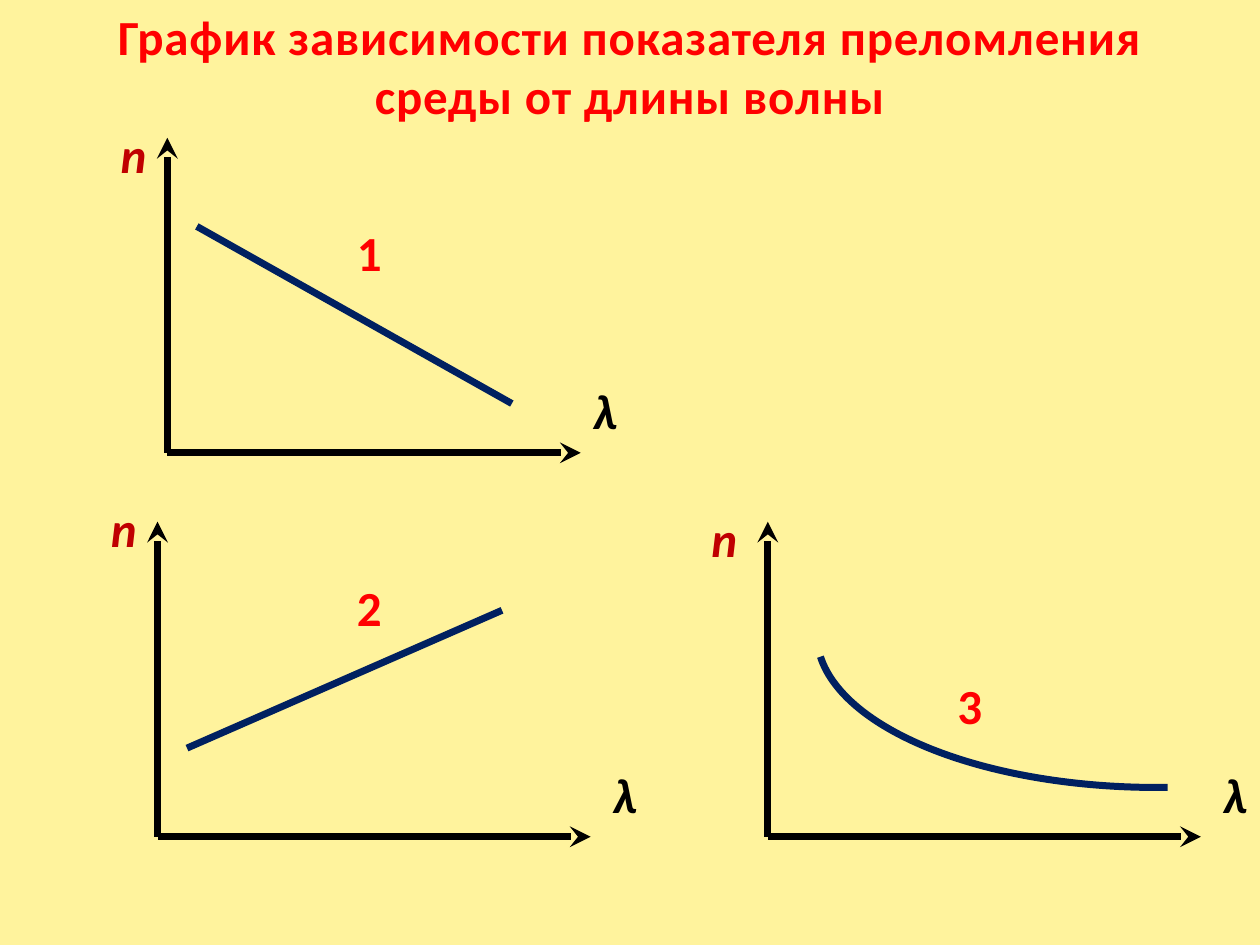
import pptx
import pptx.util
import pptx.dml.color
import pptx.enum.shapes
import pptx.enum.text
import pptx.oxml.ns
import lxml.etree

deck = pptx.Presentation()
deck.slide_width = pptx.util.Inches(10)
deck.slide_height = pptx.util.Inches(7.5)
page = deck.slides.add_slide(deck.slide_layouts[6])
column = deck.slide_width / 128
row = deck.slide_height / 96

BLACK, NAVY, RED, DARK_RED = "000000", "002060", "FF0000", "C00000"
LABEL_HEIGHT = 7.3


def color(value):
    return pptx.dml.color.RGBColor.from_string(value)


def write_text(text, *, left, top, width, height, fill, italic=False,
               wrap=False, align=pptx.enum.text.PP_ALIGN.LEFT, spacing=0):
    box = page.shapes.add_textbox(int(left * column), int(top * row),
                                  int(width * column), int(height * row))
    frame = box.text_frame
    frame.word_wrap = wrap
    frame.auto_size = pptx.enum.text.MSO_AUTO_SIZE.SHAPE_TO_FIT_TEXT
    for index, line in enumerate(text.split("\n")):
        para = frame.paragraphs[0] if index == 0 else frame.add_paragraph()
        para.alignment = align
        span = para.add_run()
        span.text = line
        span.font.name = "Calibri"
        span.font.size = pptx.util.Pt(28)
        span.font.bold = True
        span.font.italic = italic
        span.font.color.rgb = color(fill)
        if spacing:
            span._r.get_or_add_rPr().set("spc", str(int(spacing * 100)))


page.background.fill.solid()
page.background.fill.fore_color.rgb = color("FFF39D")

write_text("График зависимости показателя преломления\nсреды от длины волны",
           left=0, top=0, width=128, height=13.3, fill=RED, wrap=True,
           align=pptx.enum.text.PP_ALIGN.CENTER, spacing=0.5)

axis_height = 32
lines = []
for origin_x, origin_y, axis_width in [(17, 46, 42), (16, 85, 44), (78, 85, 44)]:
    lines.append((origin_x, origin_y, origin_x + axis_width, origin_y, BLACK))
    lines.append((origin_x, origin_y, origin_x, origin_y - axis_height, BLACK))
lines.append((20, 23, 52, 41, NAVY))
lines.append((19, 76, 51, 62, NAVY))

strokes = []
for start_x, start_y, end_x, end_y, shade in lines:
    line = page.shapes.add_connector(
        pptx.enum.shapes.MSO_CONNECTOR.STRAIGHT,
        int(start_x * column), int(start_y * row),
        int(end_x * column), int(end_y * row))
    strokes.append((line, shade))

curve = page.shapes.add_shape(
    pptx.enum.shapes.MSO_SHAPE.ARC,
    int(83 * column), int(49 * row), int(69 * column), int(31 * row))
curve.fill.background()
for index, degrees in enumerate([85.83, 176.28]):
    curve.adjustments[index] = degrees * 0.6
strokes.append((curve, NAVY))

for stroke, shade in strokes:
    stroke.line.color.rgb = color(shade)
    stroke.line.width = pptx.util.Pt(4)
    properties = stroke._element.spPr
    if shade == BLACK:
        outline = properties.find(pptx.oxml.ns.qn("a:ln"))
        lxml.etree.SubElement(outline, pptx.oxml.ns.qn("a:tailEnd"), type="stealth")
    lxml.etree.SubElement(properties, pptx.oxml.ns.qn("a:effectLst"))

label_groups = [
    ("nnn", [(11, 12), (10, 50), (71, 51)], 5.25, DARK_RED, True),
    ("λλλ", [(59, 38), (61, 77), (123, 77)], 5, BLACK, True),
    ("123", [(35, 22), (35, 58), (96, 68)], 5.12, RED, False),
]
for letters, places, width, shade, italic in label_groups:
    for letter, (left, top) in zip(letters, places):
        write_text(letter, left=left, top=top, width=width,
                   height=LABEL_HEIGHT, fill=shade, italic=italic)

deck.save("out.pptx")
